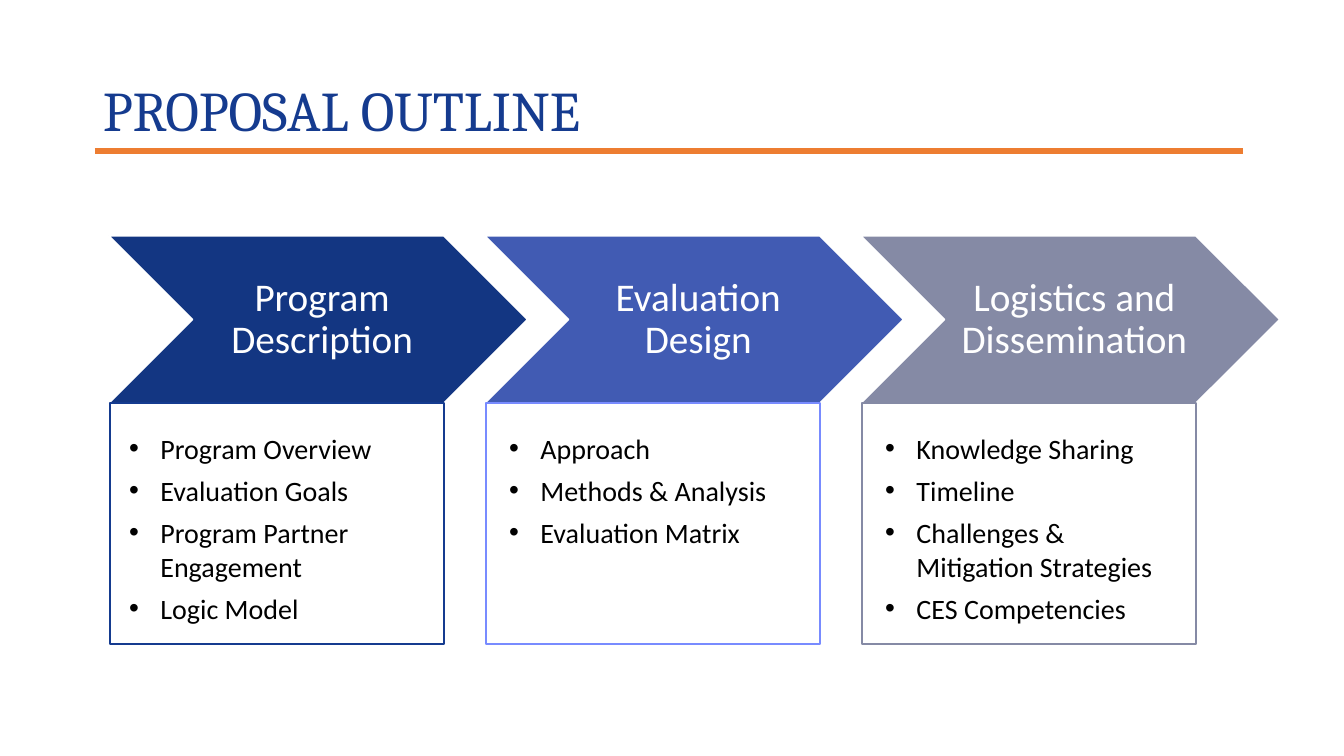
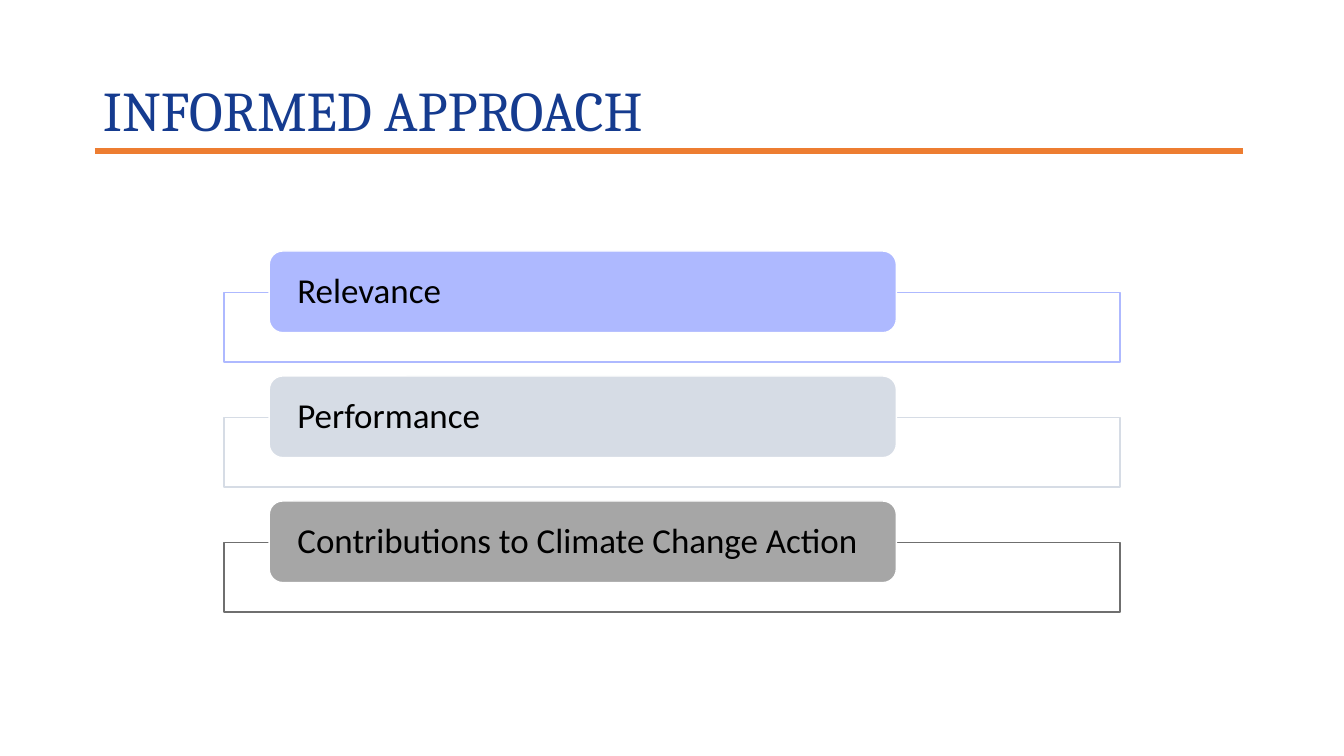
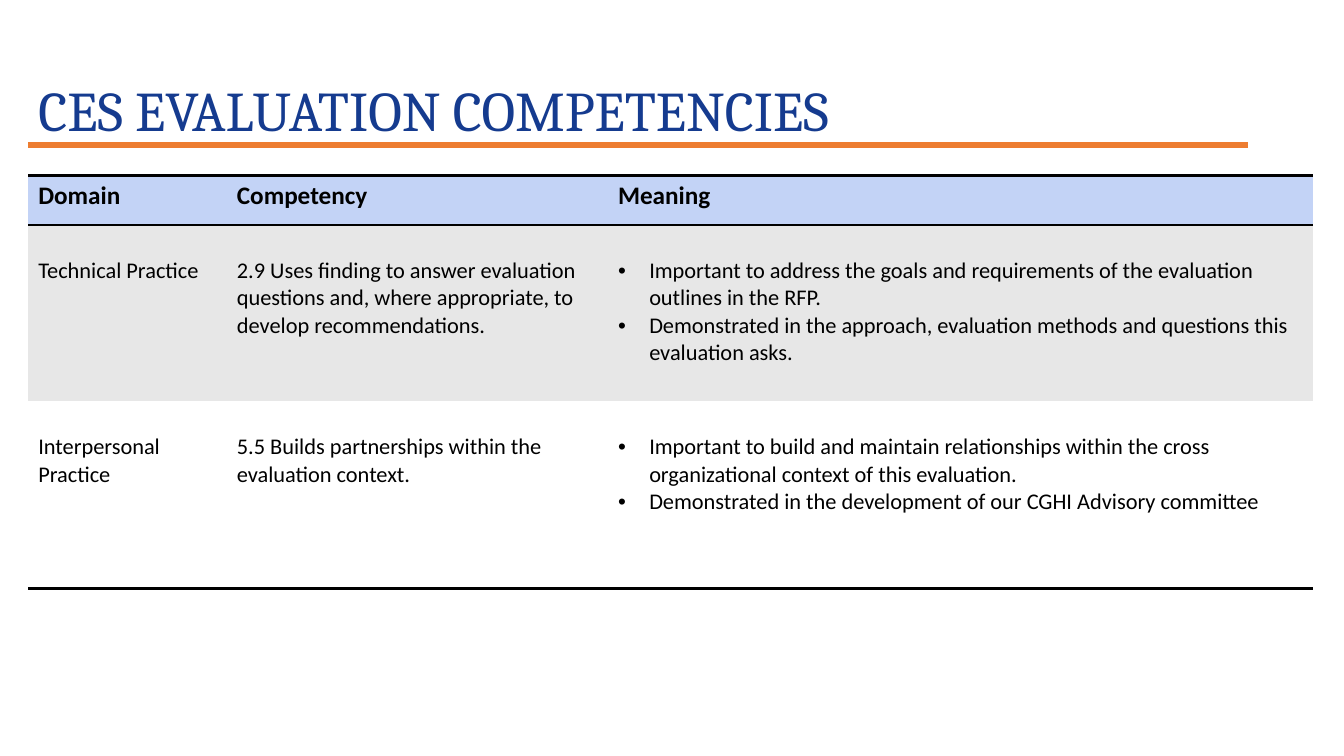
from dataclasses import dataclass

from lxml import etree
from pptx import Presentation
from pptx import util as u
from pptx.dml.color import RGBColor
from pptx.enum import shapes, text
from pptx.oxml import ns

Inches, Pt = u.Inches, u.Pt


@dataclass(frozen=True)
class Theme:
    navy: str = "153B8F"
    orange: str = "ED7D31"
    white: str = "FFFFFF"
    black: str = "000000"
    header: str = "C3D3F6"
    band: str = "E7E7E7"
    heading_font: str = "Cambria"
    body_font: str = "Calibri"
    title: int = 40
    step: int = 28
    theme_label: int = 25
    bullet: int = 20
    table_head: int = 18
    table_body: int = 16


THEME = Theme()
NO_GRID_STYLE = "{2D5ABB26-0587-4C30-8999-92F81FD0307C}"

# heading, chevron fill, box outline, left inset of the list, list
STEPS = [
    ("Program Description", "133682", THEME.navy, 0.19,
     ["Program Overview", "Evaluation Goals", "Program Partner Engagement", "Logic Model"]),
    ("Evaluation Design", "415BB3", "788BFF", 0.23,
     ["Approach", "Methods & Analysis", "Evaluation Matrix"]),
    ("Logistics and Dissemination", "858AA5", "858AA5", 0.23,
     ["Knowledge Sharing", "Timeline", "Challenges & Mitigation Strategies",
      "CES Competencies"]),
]

# label, label fill, frame outline
THEMES = [
    ("Relevance", "AEB9FF", "AEB9FF"),
    ("Performance", "D6DCE5", "D6DCE5"),
    ("Contributions to Climate Change Action", "A6A6A6", "6F6F6F"),
]

COLUMNS = [("Domain", 1.97), ("Competency", 3.78), ("Meaning", 6.99)]
ROW_HEIGHTS = [0.49, 1.75, 1.86]
COMPETENCIES = [
    ("Technical Practice",
     "2.9 Uses finding to answer evaluation questions and, where appropriate, "
     "to develop recommendations.",
     ["Important to address the goals and requirements of the evaluation outlines in the RFP.",
      "Demonstrated in the approach, evaluation methods and questions this evaluation asks."]),
    ("Interpersonal Practice",
     "5.5 Builds partnerships within the evaluation context.",
     ["Important to build and maintain relationships within the "
      "cross organizational context of this evaluation.",
      "Demonstrated in the development of our CGHI Advisory committee"]),
]


def rgb(color):
    return RGBColor.from_string(color)


def inches(*lengths):
    return [Inches(length) for length in lengths]


def add_bullet(para):
    properties = para._p.get_or_add_pPr()
    properties.set("marL", str(Inches(0.31)))
    properties.set("indent", str(-Inches(0.31)))
    etree.SubElement(properties, ns.qn("a:buFont")).set("typeface", "Arial")
    etree.SubElement(properties, ns.qn("a:buChar")).set("char", "•")


def write(frame, lines, size, color=THEME.black, font=THEME.body_font, bold=False,
          bullets=False, align=text.PP_ALIGN.LEFT, spacing=1.0, after=0):
    for index, line in enumerate(lines):
        para = frame.add_paragraph() if index else frame.paragraphs[0]
        if bullets:
            add_bullet(para)
        para.alignment = align
        para.line_spacing = spacing
        para.space_before = Pt(0)
        para.space_after = Pt(after)
        span = para.add_run()
        span.text = line
        span.font.name = font
        span.font.size = Pt(size)
        span.font.bold = bold
        span.font.color.rgb = rgb(color)


def set_margins(target, left, top, right, bottom):
    """Set the insets of a text frame or a table cell."""
    target.margin_left, target.margin_top = inches(left, top)
    target.margin_right, target.margin_bottom = inches(right, bottom)


def add_box(page, kind, place, fill, outline, width=1.0):
    box = page.shapes.add_shape(kind, *inches(*place))
    box.shadow.inherit = False
    if fill:
        box.fill.solid()
        box.fill.fore_color.rgb = rgb(fill)
    else:
        box.fill.background()
    box.line.color.rgb = rgb(outline)
    box.line.width = Pt(width)
    box.text_frame.word_wrap = True
    return box


def add_page(deck, title, place=(0.92, 0.4, 11.5, 1.45), rule=(0.94, 12.33, 1.5)):
    """Add a slide with its title and the orange rule (from x, to x, y)."""
    page = deck.slides.add_slide(deck.slide_layouts[5])
    heading = page.shapes.title
    heading.left, heading.top, heading.width, heading.height = inches(*place)
    frame = heading.text_frame
    frame.auto_size = text.MSO_AUTO_SIZE.NONE
    frame.vertical_anchor = text.MSO_ANCHOR.MIDDLE
    write(frame, [title], THEME.title, THEME.navy, THEME.heading_font, spacing=0.9)

    start, end, y = rule
    line = page.shapes.add_connector(shapes.MSO_CONNECTOR.STRAIGHT, *inches(start, y, end, y))
    line.line.color.rgb = rgb(THEME.orange)
    line.line.width = Pt(4.5)
    etree.SubElement(line._element.spPr, ns.qn("a:effectLst"))
    return page


def add_outline(deck):
    page = add_page(deck, "PROPOSAL OUTLINE")
    for index, (heading, fill, outline, inset, items) in enumerate(STEPS):
        offset = index * 3.73
        chevron = add_box(page, shapes.MSO_SHAPE.CHEVRON, (1.08 + offset, 2.34, 4.15, 1.66),
                          fill, THEME.white)
        set_margins(chevron.text_frame, 0.12, 0.04, 0.04, 0.04)
        chevron.text_frame.vertical_anchor = text.MSO_ANCHOR.MIDDLE
        write(chevron.text_frame, [heading], THEME.step, THEME.white,
              align=text.PP_ALIGN.CENTER, spacing=0.9)

        box = add_box(page, shapes.MSO_SHAPE.RECTANGLE, (1.09 + offset, 4, 3.31, 2.39),
                      None, outline, 1.5)
        set_margins(box.text_frame, inset, 0.28, 0.1, 0.05)
        box.text_frame.vertical_anchor = text.MSO_ANCHOR.TOP
        write(box.text_frame, items, THEME.bullet, bullets=True, after=6)


def add_approach(deck):
    page = add_page(deck, "INFORMED APPROACH")
    for index, (name, fill, outline) in enumerate(THEMES):
        top = 2.49 + index * 1.24
        add_box(page, shapes.MSO_SHAPE.RECTANGLE, (2.22, top + 0.41, 8.89, 0.69),
                THEME.white, outline)
        label = add_box(page, shapes.MSO_SHAPE.ROUNDED_RECTANGLE, (2.67, top, 6.22, 0.81),
                        fill, THEME.white)
        set_margins(label.text_frame, 0.24, 0, 0.24, 0)
        label.text_frame.vertical_anchor = text.MSO_ANCHOR.MIDDLE
        write(label.text_frame, [name], THEME.theme_label, spacing=0.9)


def add_border(cell, sides, width):
    """Draw black borders; sides are given in the order T, B."""
    properties = cell._tc.get_or_add_tcPr()
    for index, side in enumerate(sides):
        line = etree.Element(ns.qn("a:ln" + side), w=str(Pt(width)))
        fill = etree.SubElement(line, ns.qn("a:solidFill"))
        etree.SubElement(fill, ns.qn("a:srgbClr")).set("val", THEME.black)
        properties.insert(index, line)


def fill_cell(cell, content, fill, size, top=0.05, bold=False):
    set_margins(cell, 0.1, top, 0.1, 0.05)
    cell.fill.solid()
    cell.fill.fore_color.rgb = rgb(fill)
    bullets = isinstance(content, list)
    write(cell.text_frame, content if bullets else [content], size,
          bold=bold, bullets=bullets)


def add_competencies(deck):
    page = add_page(deck, "CES EVALUATION COMPETENCIES",
                    (0.28, 0.39, 12.24, 1.46), (0.28, 12.38, 1.44))
    frame = page.shapes.add_table(len(ROW_HEIGHTS), len(COLUMNS),
                                  *inches(0.28, 1.74, 12.74, sum(ROW_HEIGHTS)))
    table = frame.table
    table.first_row = table.horz_banding = False
    table._tbl.tblPr.find(ns.qn("a:tableStyleId")).text = NO_GRID_STYLE
    for row, height in zip(table.rows, ROW_HEIGHTS):
        row.height = Inches(height)
    for index, (heading, width) in enumerate(COLUMNS):
        table.columns[index].width = Inches(width)
        cell = table.cell(0, index)
        fill_cell(cell, heading, THEME.header, THEME.table_head, bold=True)
        add_border(cell, "TB", 2)
        for number, competency in enumerate(COMPETENCIES, start=1):
            cell = table.cell(number, index)
            fill = THEME.band if number % 2 else THEME.white
            fill_cell(cell, competency[index], fill, THEME.table_body, top=0.32)
            if number == len(COMPETENCIES):
                add_border(cell, "B", 2)


def main():
    deck = Presentation()
    deck.slide_width, deck.slide_height = inches(13.33, 7.5)
    add_outline(deck)
    add_approach(deck)
    add_competencies(deck)
    deck.save("out.pptx")


if __name__ == "__main__":
    main()
